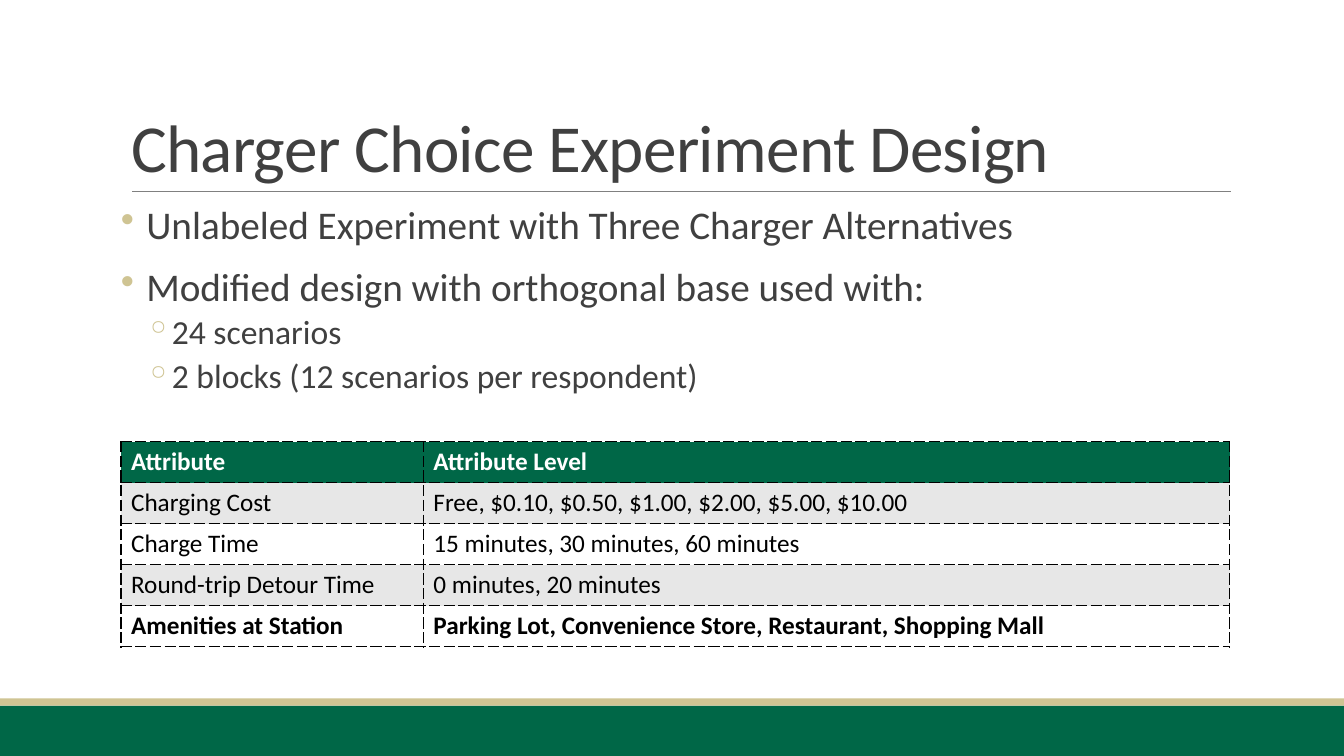
from lxml import etree
from pptx import Presentation
from pptx.dml.color import RGBColor
from pptx.enum.shapes import MSO_CONNECTOR, MSO_SHAPE
from pptx.enum.text import MSO_ANCHOR, PP_ALIGN
from pptx.oxml.ns import qn
from pptx.util import Cm, Pt

RECTANGLE = MSO_SHAPE.RECTANGLE
STRAIGHT = MSO_CONNECTOR.STRAIGHT
BOTTOM = MSO_ANCHOR.BOTTOM
TOP = MSO_ANCHOR.TOP
LEFT = PP_ALIGN.LEFT

FONT = "Calibri"
COLOURS = {
    "green": "006747",
    "sand": "CFC493",
    "rule": "808080",
    "text": "404040",
    "black": "000000",
    "white": "FFFFFF",
    "band": "E7E7E7",
}
WIDTH, HEIGHT = 33.87, 19.05
MARGIN, CONTENT_WIDTH = 3.05, 27.94

BULLETS = [
    (0, "Unlabeled Experiment with Three Charger Alternatives"),
    (0, "Modified design with orthogonal base used with:"),
    (1, "24 scenarios"),
    (1, "2 blocks (12 scenarios per respondent)"),
]
LEVELS = [
    {"mark": "•", "size": 28, "left": 0.64, "hang": 0.64, "before": 12, "after": 2},
    {"mark": "◦", "size": 24, "left": 1.27, "hang": 0.66, "before": 2, "after": 4},
]
ATTRIBUTES = [
    ("Attribute", "Attribute Level"),
    ("Charging Cost", "Free, $0.10, $0.50, $1.00, $2.00, $5.00, $10.00"),
    ("Charge Time", "15 minutes, 30 minutes, 60 minutes"),
    ("Round-trip Detour Time", "0 minutes, 20 minutes"),
    ("Amenities at Station", "Parking Lot, Convenience Store, Restaurant, Shopping Mall"),
]


def colour(name):
    return RGBColor.from_string(COLOURS[name])


def set_attributes(target, values):
    for name, value in values.items():
        setattr(target, name, value)


def add_run(paragraph, text, size, colour_name, bold=False):
    run = paragraph.add_run()
    run.text = text
    set_attributes(run.font, {"name": FONT, "size": Pt(size), "bold": bold})
    run.font.color.rgb = colour(colour_name)
    return run


def add_bar(slide, top, height, colour_name):
    bar = slide.shapes.add_shape(RECTANGLE, 0, Cm(top), Cm(WIDTH), Cm(height))
    bar.shadow.inherit = False
    bar.fill.solid()
    bar.fill.fore_color.rgb = colour(colour_name)
    bar.line.fill.background()


def add_footer(slide, top, height):
    stripe_height = 0.18
    add_bar(slide, top, height, "green")
    add_bar(slide, top - stripe_height, stripe_height, "sand")


def add_title(slide, left, top, width, height):
    title = slide.shapes.title
    set_attributes(title, {"left": Cm(left), "top": Cm(top),
                           "width": Cm(width), "height": Cm(height)})
    set_attributes(title.text_frame, {"vertical_anchor": BOTTOM, "word_wrap": True})
    paragraph = title.text_frame.paragraphs[0]
    set_attributes(paragraph, {"alignment": LEFT, "line_spacing": 0.85})
    run = add_run(paragraph, "Charger Choice Experiment Design", 48, "text")
    run.font._element.set("spc", "-50")

    bottom = Cm(top + height)
    rule = slide.shapes.add_connector(
        STRAIGHT, Cm(left + 0.28), bottom, Cm(left + width + 0.02), bottom)
    rule.line.color.rgb = colour("rule")
    rule.line.width = Pt(0.5)
    etree.SubElement(rule._element.spPr, qn("a:effectLst"))


def add_bullet_mark(paragraph, level):
    properties = paragraph._p.get_or_add_pPr()
    properties.set("marL", str(Cm(level["left"])))
    properties.set("indent", str(-Cm(level["hang"])))
    mark_colour = etree.SubElement(properties, qn("a:buClr"))
    etree.SubElement(mark_colour, qn("a:srgbClr"), val=COLOURS["sand"])
    etree.SubElement(properties, qn("a:buChar"), char=level["mark"])


def add_bullets(slide, left, top, width, height):
    box = slide.shapes.add_textbox(Cm(left), Cm(top), Cm(width), Cm(height))
    frame = box.text_frame
    set_attributes(frame, {"word_wrap": True, "vertical_anchor": TOP,
                           "margin_left": 0, "margin_right": 0})
    for index, (depth, text) in enumerate(BULLETS):
        level = LEVELS[depth]
        paragraph = frame.add_paragraph() if index else frame.paragraphs[0]
        add_bullet_mark(paragraph, level)
        set_attributes(paragraph, {
            "level": depth,
            "alignment": LEFT,
            "line_spacing": 0.9,
            "space_before": Pt(level["before"] if index else 0),
            "space_after": Pt(level["after"]),
        })
        add_run(paragraph, text, level["size"], "text")


def add_dashed_borders(cell):
    properties = cell._tc.get_or_add_tcPr()
    for side in ("lnL", "lnR", "lnT", "lnB"):
        border = etree.SubElement(properties, qn(f"a:{side}"), w=str(Pt(1)))
        fill = etree.SubElement(border, qn("a:solidFill"))
        etree.SubElement(fill, qn("a:srgbClr"), val=COLOURS["black"])
        etree.SubElement(border, qn("a:prstDash"), val="sysDash")


def add_attribute_table(slide, left, top, width, height):
    last_row = len(ATTRIBUTES) - 1
    table = slide.shapes.add_table(
        len(ATTRIBUTES), 2, Cm(left), Cm(top), Cm(width), Cm(height)).table
    first_width = 7.62
    for column, column_width in zip(table.columns, (first_width, width - first_width)):
        column.width = Cm(column_width)
    for row_index, texts in enumerate(ATTRIBUTES):
        is_header = row_index == 0
        fill_name = "green" if is_header else "band" if row_index % 2 else "white"
        for column_index, text in enumerate(texts):
            cell = table.cell(row_index, column_index)
            add_dashed_borders(cell)
            cell.fill.solid()
            cell.fill.fore_color.rgb = colour(fill_name)
            add_run(cell.text_frame.paragraphs[0], text, 18,
                    "white" if is_header else "black",
                    bold=row_index in (0, last_row))


def main():
    presentation = Presentation()
    set_attributes(presentation, {"slide_width": Cm(WIDTH), "slide_height": Cm(HEIGHT)})
    slide = presentation.slides.add_slide(presentation.slide_layouts[5])
    footer_height = 1.27
    add_footer(slide, HEIGHT - footer_height, footer_height)
    add_title(slide, MARGIN, 0.79, CONTENT_WIDTH, 4.04)
    add_attribute_table(slide, MARGIN, 11.13, CONTENT_WIDTH, 5.16)
    add_bullets(slide, MARGIN, 5.05, CONTENT_WIDTH, 5.84)
    presentation.save("out.pptx")


if __name__ == "__main__":
    main()
